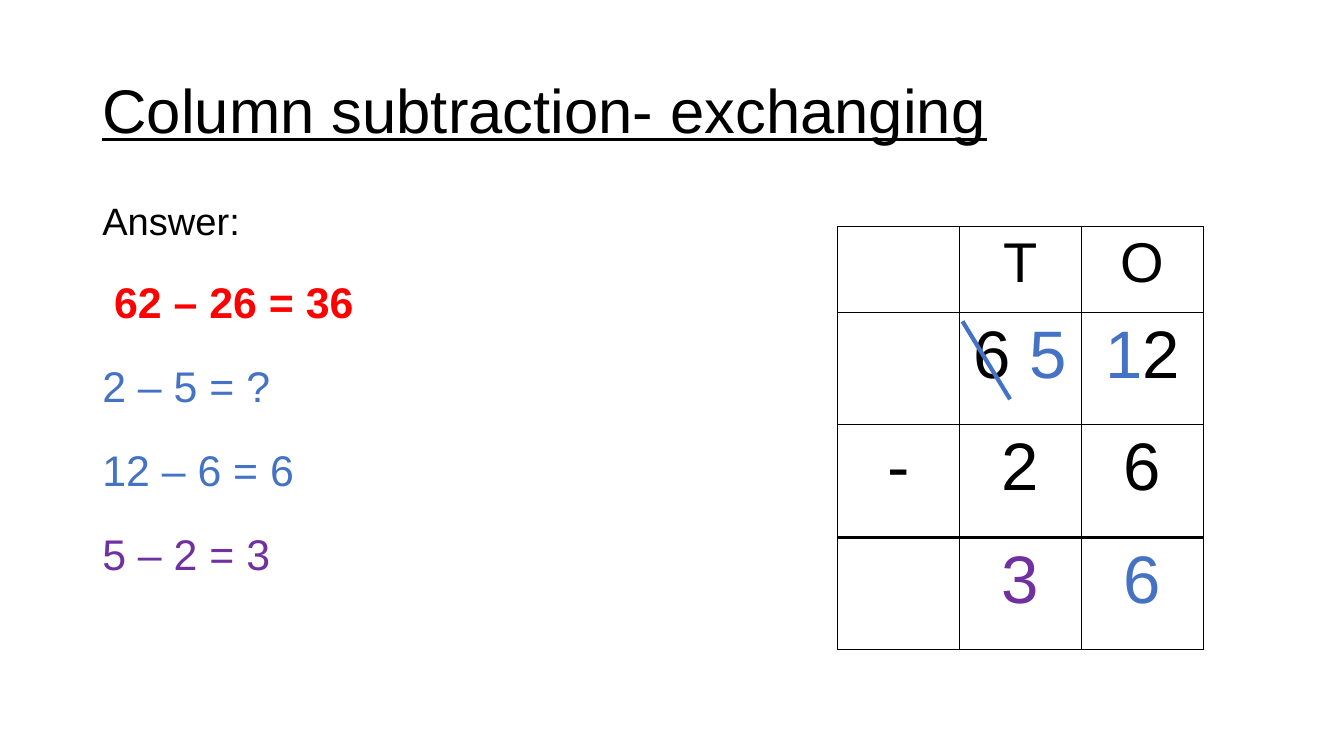
from lxml.etree import SubElement
from pptx import Presentation
from pptx.dml.color import RGBColor
from pptx.enum.shapes import MSO_CONNECTOR
from pptx.enum.text import MSO_ANCHOR, PP_ALIGN
from pptx.oxml.ns import qn
from pptx.util import Pt

BLACK = RGBColor(0x00, 0x00, 0x00)
RED = RGBColor(0xFF, 0x00, 0x00)
BLUE = RGBColor(0x44, 0x72, 0xC4)
PURPLE = RGBColor(0x70, 0x30, 0xA0)

ANSWER_LINES = [
    ("Answer:", dict(size=27.2)),
    (" 62 – 26 = 36", dict(size=30.6, color=RED, bold=True)),
    ("2 – 5 = ?", dict(size=30.6, color=BLUE)),
    ("12 – 6 = 6", dict(size=30.6, color=BLUE)),
    ("5 – 2 = 3", dict(size=30.6, color=PURPLE)),
]

SUBTRACTION_ROWS = [
    [[], [("T", BLACK)], [("O", BLACK)]],
    [[], [("6 ", BLACK), ("5", BLUE)], [("1", BLUE), ("2", BLACK)]],
    [[("-", BLACK)], [("2", BLACK)], [("6", BLACK)]],
    [[], [("3", PURPLE)], [("6", BLUE)]],
]


def add_span(para, text, size=48, color=BLACK, bold=False, underline=False, font="Arial"):
    span = para.add_run()
    span.text = text
    span.font.name = font
    span.font.size = Pt(size)
    span.font.bold = bold
    span.font.underline = underline
    span.font.color.rgb = color


class SlideBuilder:
    thin = 1
    thick = 2.25

    def __init__(self, deck):
        self.page = deck.slides.add_slide(deck.slide_layouts[5])

    def title(self, text, left, top, width, height):
        box = self.page.shapes.title
        box.left, box.top, box.width, box.height = map(Pt, (left, top, width, height))
        frame = box.text_frame
        frame.word_wrap = True
        frame.vertical_anchor = MSO_ANCHOR.MIDDLE
        para = frame.paragraphs[0]
        para.alignment = PP_ALIGN.LEFT
        para.line_spacing = 0.9
        add_span(para, text, size=44, underline=True)

    def text(self, lines, left, top, width, height, gap):
        box = self.page.shapes.add_textbox(Pt(left), Pt(top), Pt(width), Pt(height))
        frame = box.text_frame
        frame.word_wrap = True
        for index, (text, style) in enumerate(lines):
            para = frame.add_paragraph() if index else frame.paragraphs[0]
            para.line_spacing = 0.8
            para.space_before = Pt(gap if index else 0)
            add_span(para, text, **style)

    def border(self, cell, side, width):
        line = SubElement(cell._tc.get_or_add_tcPr(), qn(f"a:ln{side}"), w=str(Pt(width)))
        fill = SubElement(line, qn("a:solidFill"))
        SubElement(fill, qn("a:srgbClr"), val=str(BLACK))

    def table(self, rows, left, top, column_width, row_heights):
        columns = len(rows[0])
        frame = self.page.shapes.add_table(
            len(rows), columns, Pt(left), Pt(top),
            Pt(column_width * columns), Pt(sum(row_heights)))
        table = frame.table
        table.first_row = table.horz_banding = False
        for column in table.columns:
            column.width = Pt(column_width)
        last = len(rows) - 1
        for r, row in enumerate(rows):
            table.rows[r].height = Pt(row_heights[r])
            for c, spans in enumerate(row):
                cell = table.cell(r, c)
                para = cell.text_frame.paragraphs[0]
                para.alignment = PP_ALIGN.CENTER
                for text, color in spans:
                    add_span(para, text, size=48 if r else 40, color=color)
                top_width = self.thick if r == last else self.thin
                bottom_width = self.thick if r == last - 1 else self.thin
                widths = dict(L=self.thin, R=self.thin, T=top_width, B=bottom_width)
                for side, width in widths.items():
                    self.border(cell, side, width)
                cell.fill.background()

    def line(self, start, end, color, width):
        line = self.page.shapes.add_connector(
            MSO_CONNECTOR.STRAIGHT, *map(Pt, (*start, *end)))
        line.line.color.rgb = color
        line.line.width = Pt(width)
        SubElement(line._element.spPr, qn("a:effectLst"))


def main():
    deck = Presentation()
    deck.slide_width, deck.slide_height = Pt(960), Pt(540)
    slide = SlideBuilder(deck)
    slide.title("Column subtraction- exchanging", 66, 28.75, 828, 104.4)
    slide.text(ANSWER_LINES, 66, 144, 828, 342.6, gap=30.6)
    slide.table(SUBTRACTION_ROWS, 598.5, 162, 87, [61.2, 80.3, 80.3, 80.3])
    slide.line((721.5, 285.2), (687.5, 229.5), BLUE, 3)
    deck.save("out.pptx")


if __name__ == "__main__":
    main()
